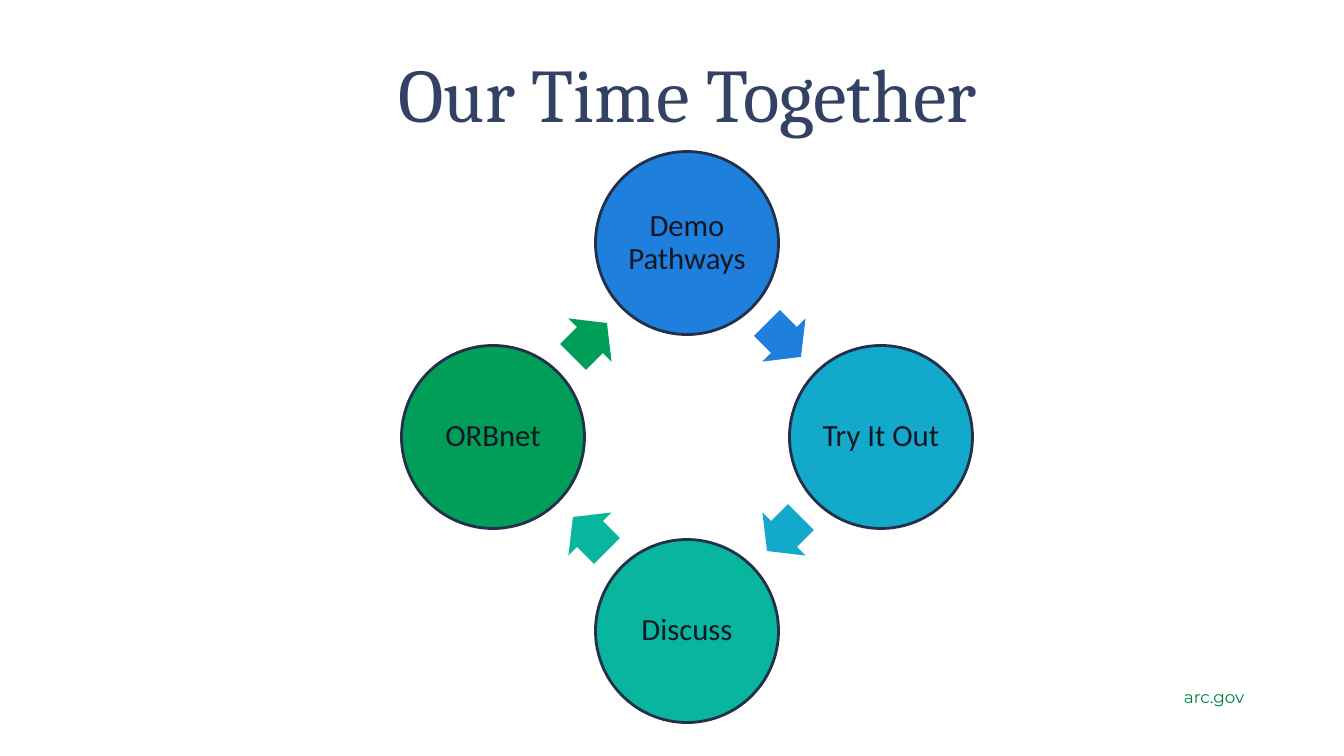
"""Build the "Our Time Together" slide: four agenda circles in a clockwise cycle."""
from math import cos, radians, sin

from pptx import Presentation
from pptx.dml.color import RGBColor
from pptx.enum.shapes import MSO_SHAPE as Shape
from pptx.enum.text import MSO_ANCHOR as Anchor, PP_ALIGN as Align
from pptx.util import Emu, Pt

TITLE = "Our Time Together"
SITE = "arc.gov"
STEPS = [
    ("Demo Pathways", "1F7FDD"),
    ("Try It Out", "12A9CB"),
    ("Discuss", "08B6A0"),
    ("ORBnet", "009E59"),
]
TITLE_BOX = (168, 42, 1039, 109)
SITE_BOX = (1174, 682, 159, 30)
TITLE_FONT = {"name": "Cambria", "size": Pt(54)}
SITE_FONT = {"name": "Montserrat", "size": Pt(12)}
STEP_FONT = {"name": "Calibri", "size": Pt(22)}
TITLE_COLOR, SITE_COLOR, STEP_COLOR, OUTLINE = "334165", "008045", "121724", "242F49"
CENTER_X, CENTER_Y, RADIUS = 687, 437, 194
DIAMETER, ARROW_WIDTH, ARROW_HEIGHT, INSET = 183, 48, 61, 3


def px(length):
    return Emu(round(length * 914400 / 100.8))


def rgb(color):
    return RGBColor.from_string(color)


def write(frame, words, font, color, align):
    frame.word_wrap = True
    line = frame.paragraphs[0]
    line.text = words
    line.alignment = align
    for key, value in font.items():
        setattr(line.font, key, value)
    line.font.color.rgb = rgb(color)
    return line


def add_text(slide, box, words, font, color, align):
    frame = slide.shapes.add_textbox(*map(px, box)).text_frame
    write(frame, words, font, color, align)


def add_centered(slide, kind, x, y, width, height, color):
    box = (x - width / 2, y - height / 2, width, height)
    shape = slide.shapes.add_shape(kind, *map(px, box))
    shape.shadow.inherit = False
    shape.fill.solid()
    shape.fill.fore_color.rgb = rgb(color)
    shape.line.fill.background()
    return shape


def add_step(slide, x, y, label, color):
    circle = add_centered(slide, Shape.OVAL, x, y, DIAMETER, DIAMETER, color)
    circle.line.color.rgb = rgb(OUTLINE)
    circle.line.width = Pt(2)
    frame = circle.text_frame
    for side in ("left", "top", "right", "bottom"):
        setattr(frame, f"margin_{side}", px(INSET))
    frame.vertical_anchor = Anchor.MIDDLE
    write(frame, label, STEP_FONT, STEP_COLOR, Align.CENTER).line_spacing = 0.9


def add_arrow(slide, x, y, rotation, color):
    arrow = add_centered(slide, Shape.RIGHT_ARROW, x, y, ARROW_WIDTH, ARROW_HEIGHT, color)
    arrow.adjustments[0], arrow.adjustments[1] = 0.6, 0.5
    arrow.rotation = rotation


def main():
    deck = Presentation()
    deck.slide_width, deck.slide_height = px(1344), px(756)
    slide = deck.slides.add_slide(deck.slide_layouts[6])
    add_text(slide, SITE_BOX, SITE, SITE_FONT, SITE_COLOR, Align.LEFT)
    add_text(slide, TITLE_BOX, TITLE, TITLE_FONT, TITLE_COLOR, Align.CENTER)

    turn = 360 / len(STEPS)
    angles = [radians(turn * index - 90) for index in range(len(STEPS))]
    centers = [(CENTER_X + RADIUS * cos(a), CENTER_Y + RADIUS * sin(a)) for a in angles]
    following = centers[1:] + centers[:1]
    for index, (label, color) in enumerate(STEPS):
        (x, y), (next_x, next_y) = centers[index], following[index]
        add_step(slide, x, y, label, color)
        add_arrow(slide, (x + next_x) / 2, (y + next_y) / 2, turn * (index + 0.5), color)
    deck.save("out.pptx")


if __name__ == "__main__":
    main()
